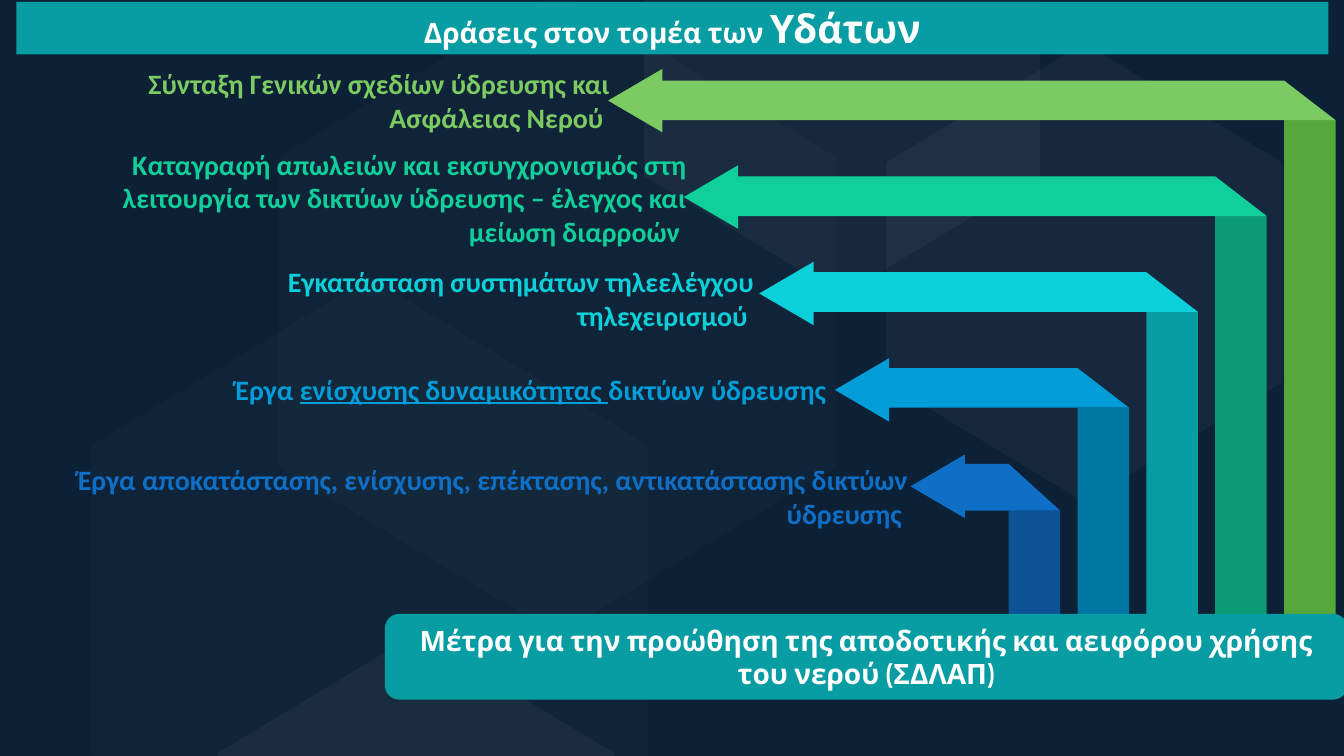
from lxml import etree
from pptx import Presentation
from pptx.dml.color import RGBColor
from pptx.enum.shapes import MSO_SHAPE as Shape
from pptx.enum.text import MSO_ANCHOR as Anchor, MSO_AUTO_SIZE as AutoSize, PP_ALIGN as Align
from pptx.oxml.ns import qn
from pptx.util import Cm, Pt

TEAL, WHITE = "089CA3", "FFFFFF"
HEXAGON = [(0, 0.5), (0.26, 0), (0.74, 0), (1, 0.5), (0.74, 1), (0.26, 1)]
# left, top, width, height, opacity in percent
HEXAGONS = [
    (5.92, 0.84, 16.26, 14.05, 2),
    (21.54, 1.88, 11.56, 9.98, 4),
    (15.44, -3.33, 11.56, 9.98, 4),
    (4.7, 16.76, 11.56, 9.98, 4),
    (1.19, 8.1, 16.26, 14.05, 2),
]
# arrow colour, post colour, band height, label box, label runs (text, underlined)
ACTIONS = [
    ("7CCA62", "55A839", 1, (0.71, 1.55, 14.91, 1.96),
     [("Σύνταξη Γενικών σχεδίων ύδρευσης και Ασφάλειας Νερού ", False)]),
    ("10CF9B", "0C9B74", 1, (0.71, 3.58, 16.84, 2.82),
     [("Καταγραφή απωλειών και εκσυγχρονισμός στη λειτουργία των δικτύων "
       "ύδρευσης – έλεγχος και μείωση διαρροών ", False)]),
    ("0BD0D9", TEAL, 1, (2.97, 6.55, 16.28, 1.96),
     [("Εγκατάσταση συστημάτων τηλεελέγχου τηλεχειρισμού ", False)]),
    ("009DD9", "0076A3", 1, (2.84, 9.25, 18.39, 1.12),
     [("Έργα ", False), ("ενίσχυσης δυναμικότητας ", True), ("δικτύων ύδρευσης ", False)]),
    ("0F6FC6", "0B5394", 1.18, (0, 11.53, 23.14, 1.96),
     [("Έργα αποκατάστασης, ενίσχυσης, επέκτασης, αντικατάστασης δικτύων ύδρευσης ", False)]),
]
POST_BOTTOM = 15.6


def rgb(value):
    return RGBColor.from_string(value)


def apply(target, values):
    for name, value in values.items():
        setattr(target, name, value)


class SlideBuilder:
    """Holds the page and its text style."""

    bar_style = {"name": "Cabin", "size": Pt(20), "bold": True}
    label_style = {"name": "Calibri", "size": Pt(20), "bold": True}

    def __init__(self, page):
        self.page = page
        self.shapes = page.shapes

    def background(self, color):
        fill = self.page.background.fill
        fill.solid()
        fill.fore_color.rgb = rgb(color)

    def paint(self, shape, color, opacity=100):
        shape.fill.solid()
        shape.fill.fore_color.rgb = rgb(color)
        shape.line.fill.background()
        if opacity < 100:
            tint = shape._element.spPr.find(qn("a:solidFill")).find(qn("a:srgbClr"))
            etree.SubElement(tint, qn("a:alpha"), val=str(opacity * 1000))

    def preset(self, kind, bounds, color, rotation=0):
        shape = self.shapes.add_shape(kind, *map(Cm, bounds))
        shape.shadow.inherit = False
        shape.rotation = rotation
        self.paint(shape, color)
        return shape

    def polygon(self, points, color, opacity=100, rotation=0):
        start, *rest = [(Cm(x), Cm(y)) for x, y in points]
        builder = self.shapes.build_freeform(*start)
        builder.add_line_segments(rest)
        shape = builder.convert_to_shape()
        shape.shadow.inherit = False
        shape.rotation = rotation
        self.paint(shape, color, opacity)

    def set_text(self, shape, runs, color, style, align, frame_format):
        """Fill a shape with one paragraph of (text, font changes) runs."""
        frame = shape.text_frame
        apply(frame, {"word_wrap": True, **frame_format})
        para = frame.paragraphs[0]
        para.alignment = align
        for text, changes in runs:
            span = para.add_run()
            span.text = text
            apply(span.font, {**style, **changes})
            span.font.color.rgb = rgb(color)

    def bar_text(self, shape, runs):
        self.set_text(shape, runs, WHITE, self.bar_style, Align.CENTER,
                      {"vertical_anchor": Anchor.MIDDLE, "auto_size": AutoSize.NONE})

    def title(self, bounds, runs):
        """Turn the title placeholder into a rounded bar above the hexagons."""
        title = self.shapes.title
        apply(title, dict(zip(("left", "top", "width", "height"), map(Cm, bounds))))
        outline = etree.SubElement(title._element.spPr, qn("a:prstGeom"), prst="roundRect")
        etree.SubElement(outline, qn("a:avLst"))
        self.paint(title, TEAL)
        self.bar_text(title, runs)
        title._element.getparent().append(title._element)

    def label(self, bounds, runs, color):
        box = self.shapes.add_textbox(*map(Cm, bounds))
        spans = [(text, {"underline": True} if underlined else {}) for text, underlined in runs]
        self.set_text(box, spans, color, self.label_style, Align.RIGHT,
                      {"auto_size": AutoSize.SHAPE_TO_FIT_TEXT})

    def bent_arrow(self, row, color, post_color, band_height):
        """Draw a post that folds left into a band with an arrowhead."""
        post_left = 32.36 - 1.735 * row
        post_right = post_left + 1.3
        band_left = 16.69 + 1.895 * row
        band_top = 2.03 + 2.415 * row
        fold = band_top + band_height
        self.preset(Shape.RECTANGLE, (post_left, fold, 1.3, POST_BOTTOM - fold), post_color)
        self.polygon([(band_left, band_top), (post_left, band_top),
                      (post_right, fold), (band_left, fold)], color)
        self.preset(Shape.ISOSCELES_TRIANGLE,
                    (15.21 + 1.905 * row, 1.85 + 2.43 * row, 1.6, 1.37), color, 270)


def main():
    deck = Presentation()
    deck.slide_width, deck.slide_height = Cm(33.87), Cm(19.05)
    slide = SlideBuilder(deck.slides.add_slide(deck.slide_layouts[5]))
    slide.background("0C2036")
    for left, top, width, height, opacity in HEXAGONS:
        corners = [(left + x * width, top + y * height) for x, y in HEXAGON]
        slide.polygon(corners, WHITE, opacity, 90)
    slide.title((0.41, 0.05, 33.07, 1.32),
                [("Δράσεις στον τομέα των ", {}), ("Υδάτων", {"size": Pt(28)})])
    for row, (color, post_color, band_height, bounds, runs) in enumerate(ACTIONS):
        slide.bent_arrow(row, color, post_color, band_height)
        slide.label(bounds, runs, color)
    footer = slide.preset(Shape.ROUNDED_RECTANGLE, (9.7, 15.47, 24.26, 2.16), TEAL)
    slide.bar_text(footer, [("Μέτρα για την προώθηση της αποδοτικής και αειφόρου χρήσης "
                             "του νερού (ΣΔΛΑΠ)", {})])
    deck.save("out.pptx")


if __name__ == "__main__":
    main()
